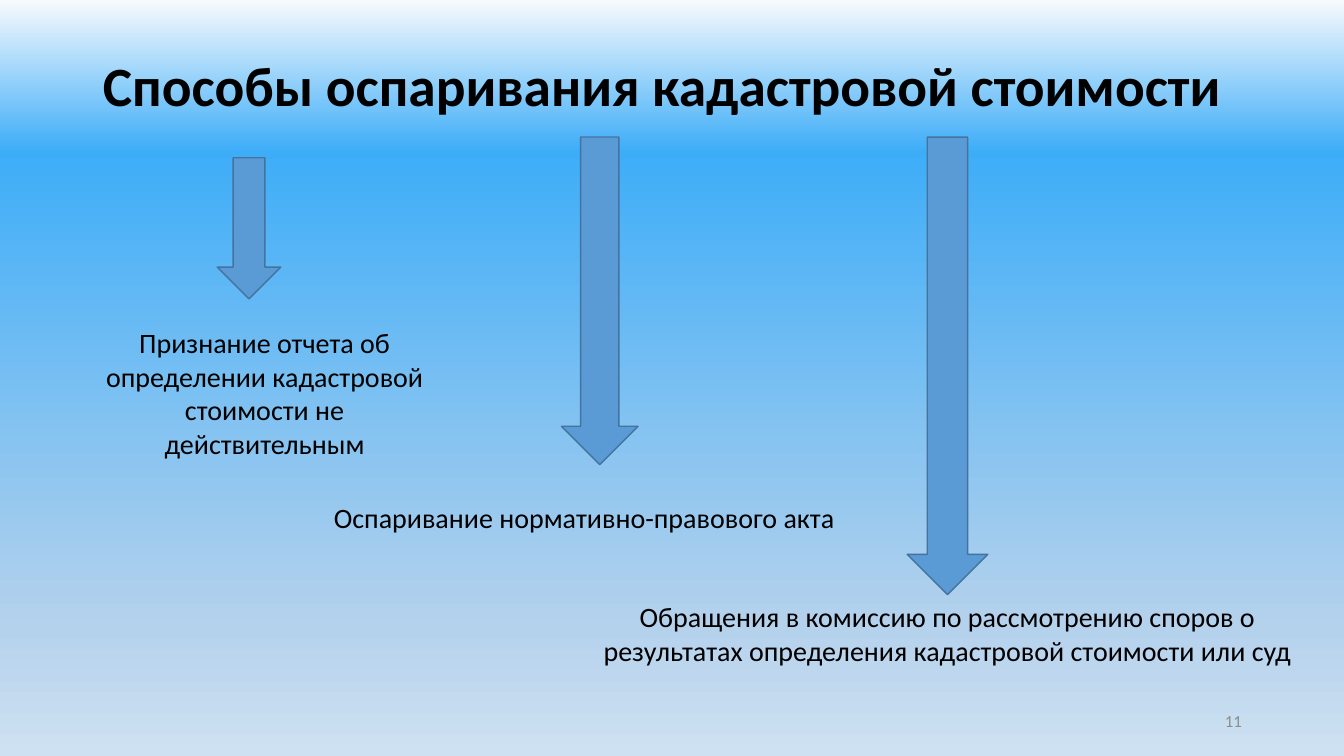
from lxml.etree import SubElement
from pptx import Presentation
from pptx.dml.color import RGBColor
from pptx.enum.shapes import MSO_SHAPE as Preset
from pptx.enum.text import MSO_ANCHOR as Anchor, MSO_AUTO_SIZE as AutoSize, PP_ALIGN as Align
from pptx.oxml.ns import qn
from pptx.util import Inches, Pt

WIDTH, HEIGHT = Inches(13.333), Inches(7.5)
FONT = "Calibri"
BLACK = RGBColor(0x00, 0x00, 0x00)
GREY = RGBColor(0x8C, 0x8C, 0x8C)
ARROW_FILL = RGBColor(0x5B, 0x9B, 0xD5)
ARROW_LINE = RGBColor(0x43, 0x73, 0x9E)
SKY = [
    (0, RGBColor(0xF7, 0xFA, 0xFD)),
    (20, RGBColor(0x3E, 0xAD, 0xF8)),
    (83, RGBColor(0xB5, 0xD2, 0xEC)),
    (100, RGBColor(0xCE, 0xE1, 0xF2)),
]

# Boxes are left, top, width, height in percent of the slide
TITLE_BOX = (6.9, 5.33, 86.25, 12.8)
NUMBER_BOX = (70.65, 92.67, 22.5, 5.33)
# Each way of contesting: arrow preset, rotation, arrow box, text, text box
WAYS = [
    (Preset.RIGHT_ARROW, 90, (13.28, 26, 10.5, 8.4),
     "Признание отчета об определении кадастровой стоимости не действительным",
     (6.9, 42.4, 25.58, 19.33)),
    (Preset.DOWN_ARROW, 0, (41.78, 18.13, 5.7, 43.33),
     "Оспаривание нормативно-правового акта",
     (23.93, 65.6, 39.08, 5.87)),
    (Preset.DOWN_ARROW, 0, (67.5, 18.13, 6, 60.53),
     "Обращения в комиссию по рассмотрению споров о "
     "результатах определения кадастровой стоимости или суд",
     (43.5, 78.67, 54, 10.27)),
]


def place(box):
    """Turn a box in percent into slide lengths."""
    sides = (WIDTH, HEIGHT, WIDTH, HEIGHT)
    return [round(side * share / 100) for side, share in zip(sides, box)]


def paint_background(slide, stops):
    fill = slide.background.fill
    fill.gradient()
    fill.gradient_angle = 270  # counter-clockwise: runs from top to bottom
    stop_list = slide.element.find(".//" + qn("a:gsLst"))
    for stop in list(stop_list):
        stop_list.remove(stop)
    for percent, color in stops:
        stop = SubElement(stop_list, qn("a:gs"), pos=str(percent * 1000))
        SubElement(stop, qn("a:srgbClr"), val=str(color))


def write(shape, text, size, color=BLACK, align=Align.CENTER, anchor=Anchor.TOP, bold=False):
    frame = shape.text_frame
    frame.word_wrap = True
    frame.auto_size = AutoSize.NONE
    frame.vertical_anchor = anchor
    paragraph = frame.paragraphs[0]
    paragraph.alignment = align
    run = paragraph.add_run()
    run.text = text
    run.font.name = FONT
    run.font.size = Pt(size)
    run.font.bold = bold
    run.font.color.rgb = color
    return paragraph


def add_title(slide, text):
    title = slide.shapes.title
    title.left, title.top, title.width, title.height = place(TITLE_BOX)
    paragraph = write(title, text, 39.6, align=Align.LEFT, anchor=Anchor.MIDDLE, bold=True)
    paragraph.line_spacing = 0.9


def add_text(slide, box, text, size, **style):
    write(slide.shapes.add_textbox(*place(box)), text, size, **style)


def add_arrow(slide, preset, rotation, box):
    arrow = slide.shapes.add_shape(preset, *place(box))
    arrow.rotation = rotation
    arrow.shadow.inherit = False
    arrow.fill.solid()
    arrow.fill.fore_color.rgb = ARROW_FILL
    arrow.line.color.rgb = ARROW_LINE
    arrow.line.width = Pt(1)


def main():
    presentation = Presentation()
    presentation.slide_width, presentation.slide_height = WIDTH, HEIGHT
    slide = presentation.slides.add_slide(presentation.slide_layouts.get_by_name("Title Only"))
    paint_background(slide, SKY)

    # Heading and page number
    add_title(slide, "Способы оспаривания кадастровой стоимости")
    add_text(slide, NUMBER_BOX, "11", 12, color=GREY, align=Align.RIGHT, anchor=Anchor.MIDDLE)

    # Three ways, each with its arrow
    for preset, rotation, arrow_box, text, text_box in WAYS:
        add_arrow(slide, preset, rotation, arrow_box)
        add_text(slide, text_box, text, 20)

    presentation.save("out.pptx")


if __name__ == "__main__":
    main()
